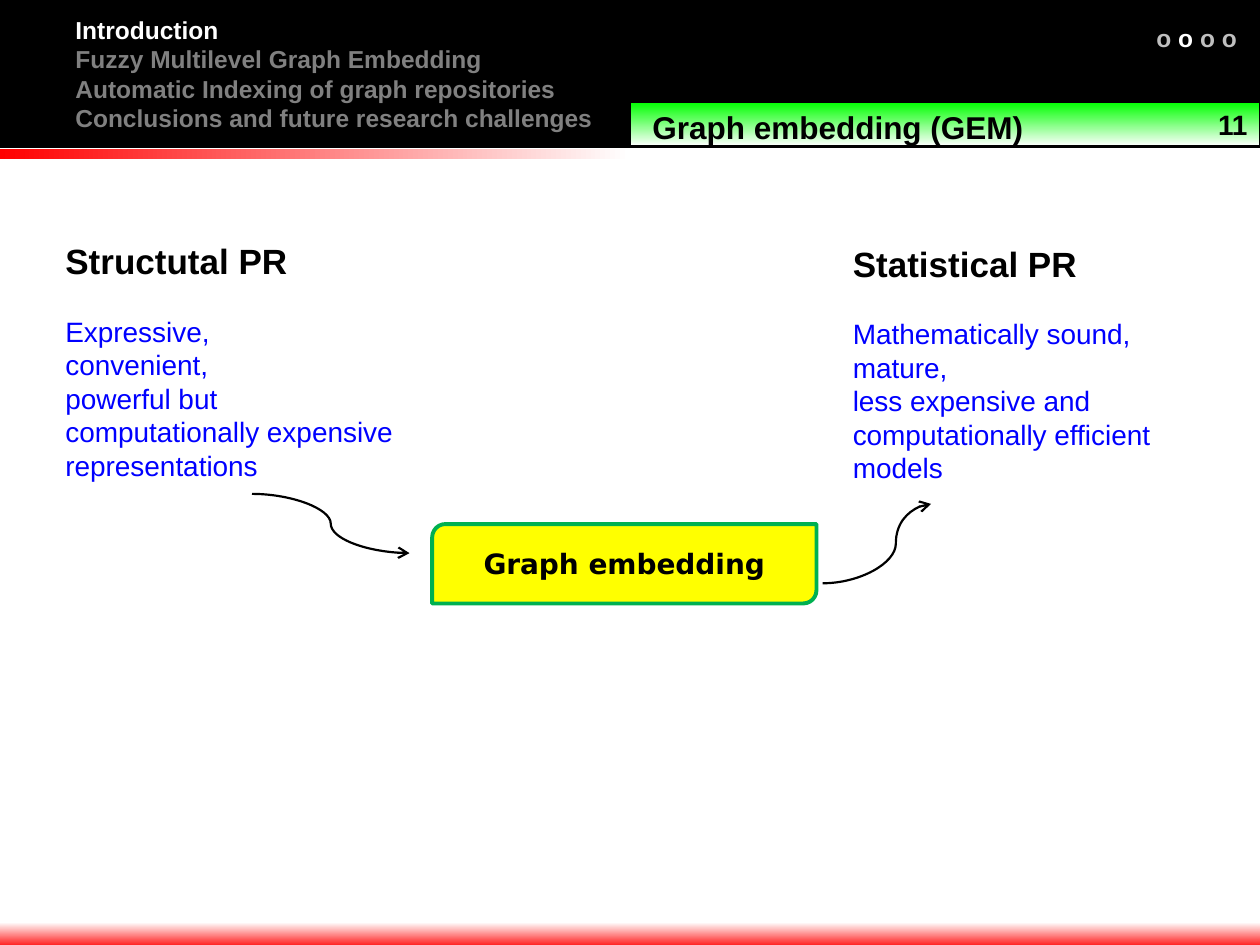
from lxml.etree import SubElement
from pptx import Presentation
from pptx.dml.color import RGBColor
from pptx.enum.shapes import MSO_CONNECTOR as Link, MSO_SHAPE as Preset
from pptx.enum.text import MSO_ANCHOR as Anchor, PP_ALIGN as Align
from pptx.oxml.ns import qn
from pptx.util import Inches, Pt


def paint(colour_format, hex_colour):
    colour_format.rgb = RGBColor.from_string(hex_colour)


def write(shape, paragraphs, size, anchor=Anchor.MIDDLE, align=Align.LEFT,
          indent=0, font="Arial", wrap=True):
    frame = shape.text_frame
    frame.word_wrap = wrap
    frame.vertical_anchor = anchor
    for index, runs in enumerate(paragraphs):
        paragraph = frame.paragraphs[0] if index == 0 else frame.add_paragraph()
        paragraph.alignment = align
        if indent:
            paragraph._p.get_or_add_pPr().set("marL", str(Inches(indent)))
        for words, colour, bold in runs:
            run = paragraph.add_run()
            run.text = words
            run.font.name = font
            run.font.size = Pt(size)
            run.font.bold = bold
            paint(run.font.color, colour)
    return frame


WIDTH, HEIGHT = 10, 7.5
HALF = WIDTH / 2
BLACK, WHITE, GREY, SILVER = "000000", "FFFFFF", "808080", "BFBFBF"
RED, GREEN, BLUE, YELLOW, EDGE = "FF0000", "00FF00", "0000FF", "FFFF00", "00B050"

deck = Presentation()
deck.slide_width, deck.slide_height = Inches(WIDTH), Inches(HEIGHT)
slide = deck.slides.add_slide(deck.slide_layouts[6])
shapes = slide.shapes

panels = []
for preset, box, colours, angle, edge, weight in [
    (Preset.RECTANGLE, (0, 0, WIDTH, 1.17), [BLACK], 0, BLACK, 0.75),
    (Preset.RECTANGLE, (0, 7.32, WIDTH, 0.21), [WHITE, RED], 270, None, 0),
    (Preset.RECTANGLE, (0, 1.18, HALF, 0.08), [RED, WHITE], 0, None, 0),
    (Preset.RECTANGLE, (HALF, 0.81, HALF, 0.35), [GREEN, WHITE], 270, BLACK, 0.75),
    (Preset.ROUND_2_DIAG_RECTANGLE, (3.43, 4.16, 3.05, 0.63), [YELLOW], 0, EDGE, 2.25),
]:
    panel = shapes.add_shape(preset, *map(Inches, box))
    panel.shadow.inherit = False
    if len(colours) == 1:
        panel.fill.solid()
        paint(panel.fill.fore_color, colours[0])
    else:
        panel.fill.gradient()
        panel.fill.gradient_angle = angle
        for stop, colour in zip(panel.fill.gradient_stops, colours):
            paint(stop.color, colour)
    if edge:
        paint(panel.line.color, edge)
        panel.line.width = Pt(weight)
    else:
        panel.line.fill.background()
    panels.append(panel)
header, footer, red_rule, title_bar, embedding = panels

sections = ["Introduction", "Fuzzy Multilevel Graph Embedding",
            "Automatic Indexing of graph repositories",
            "Conclusions and future research challenges"]
write(header, [[(section, WHITE if section == "Introduction" else GREY, True)]
               for section in sections], 14, indent=0.5)
write(title_bar, [[("11", BLACK, True)]], 16, align=Align.RIGHT)
write(embedding, [[("Graph embedding", BLACK, True)]], 16,
      align=Align.CENTER, font="DejaVu Sans")

title = shapes.add_textbox(*map(Inches, (5.08, 0.81, 4.55, 0.4)))
write(title, [[("Graph embedding (GEM)", BLACK, True)]], 18, anchor=Anchor.BOTTOM)

for box, heading, traits in [
    ((0.32, 1.84, 3.15, 2.05), "Structutal PR",
     ["Expressive,", "convenient,", "powerful but",
      "computationally expensive representations"]),
    ((6.57, 1.86, 3.2, 2.05), "Statistical PR",
     ["Mathematically sound,", "mature,",
      "less expensive and computationally efficient models"]),
]:
    approach = shapes.add_textbox(*map(Inches, box))
    frame = write(approach, [[(heading, BLACK, True)]]
                  + [[(trait, BLUE, False)] for trait in traits], 16, indent=0.1)
    frame.paragraphs[0].runs[0].font.size = Pt(20)
    frame.paragraphs[0].space_after = Pt(18.4)

for ends, bend in [((2, 3.92, 3.25, 4.39), 50000), ((6.53, 4.63, 7.39, 4), 67500)]:
    arrow = shapes.add_connector(Link.CURVE, *map(Inches, ends))
    paint(arrow.line.color, BLACK)
    arrow.line.width = Pt(1.25)
    properties = arrow._element.spPr
    guides = properties.find(qn("a:prstGeom")).find(qn("a:avLst"))
    SubElement(guides, qn("a:gd"), name="adj1", fmla=f"val {bend}")
    SubElement(properties.find(qn("a:ln")), qn("a:tailEnd"), type="arrow")
    SubElement(properties, qn("a:effectLst"))

progress = shapes.add_textbox(*map(Inches, (9.08, 0.13, 0.84, 0.34)))
write(progress, [[("o ", SILVER, True), ("o", WHITE, True), (" o o", SILVER, True)]],
      14, anchor=Anchor.TOP, wrap=False)

deck.save("out.pptx")
